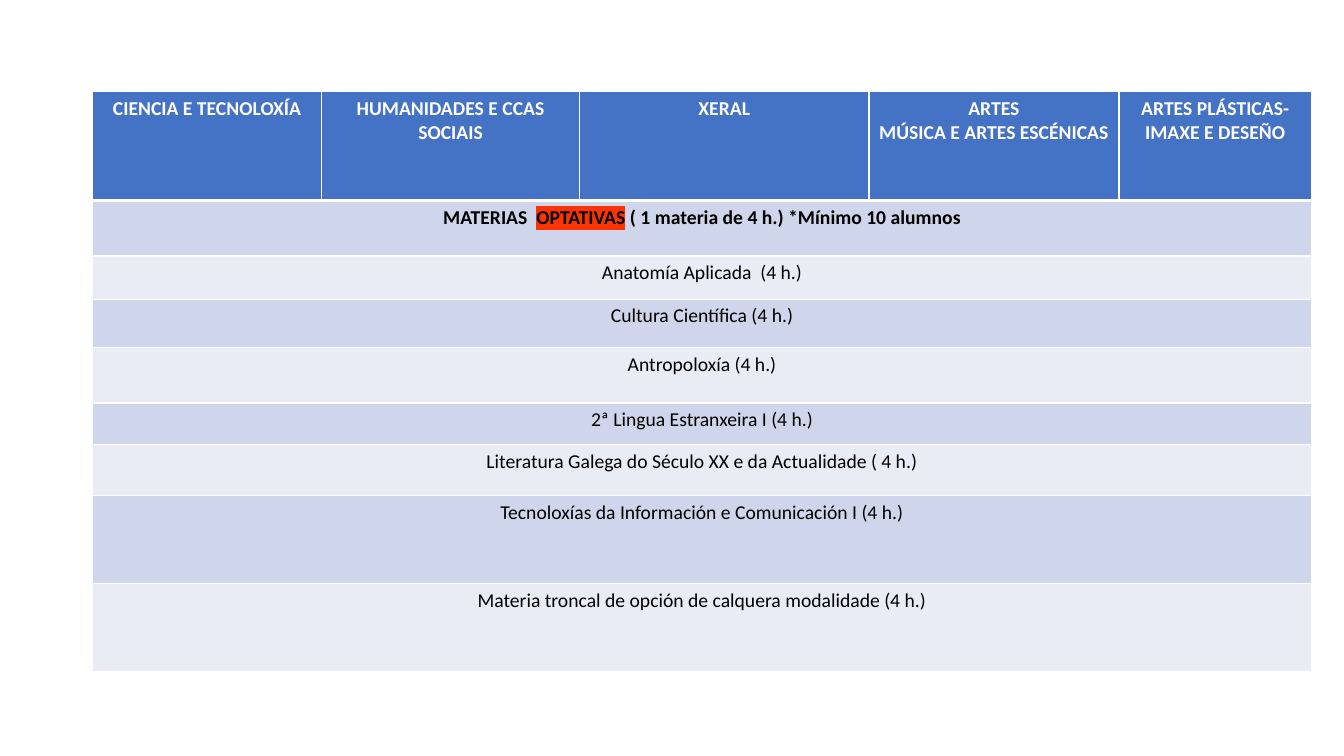
"""Build the slide that lists the optional subjects shared by every study branch."""
from dataclasses import dataclass

from lxml.etree import SubElement
from pptx import Presentation
from pptx.dml.color import RGBColor
from pptx.enum.text import PP_ALIGN as Align
from pptx.oxml import parse_xml
from pptx.oxml.ns import nsdecls, qn
from pptx.table import _Cell as Cell
from pptx.text.text import _Paragraph as Paragraph
from pptx.util import Inches, Pt

WHITE = RGBColor(0xFF, 0xFF, 0xFF)
BLACK = RGBColor(0x00, 0x00, 0x00)
HEADER_BLUE = RGBColor(0x44, 0x72, 0xC4)
BAND_DARK = RGBColor(0xCF, 0xD5, 0xEA)
BAND_LIGHT = RGBColor(0xE9, 0xEB, 0xF5)
MARKER_RED = RGBColor(0xFF, 0x33, 0x00)

SLIDE_WIDTH, SLIDE_HEIGHT = Inches(13.33), Inches(7.5)
LEFT, TOP = 6.9, 12.13
HEADER_HEIGHT = 14.4
TEXT_FORMAT = {"name": "Calibri", "size": Pt(14)}


@dataclass(frozen=True)
class Branch:
    """A header column, its width in percent of the slide."""
    title: str
    width: float


@dataclass(frozen=True)
class Band:
    """A full-width row, its height in percent of the slide."""
    text: str
    height: float
    bold: bool = False
    marked: str = ""


BRANCHES = [
    Branch("CIENCIA E TECNOLOXÍA", 17.03),
    Branch("HUMANIDADES E CCAS SOCIAIS", 19.2),
    Branch("XERAL", 21.53),
    Branch("ARTES\nMÚSICA E ARTES ESCÉNICAS", 18.6),
    Branch("ARTES PLÁSTICAS-IMAXE E DESEÑO", 14.33),
]
BANDS = [
    Band("MATERIAS  OPTATIVAS ( 1 materia de 4 h.) *Mínimo 10 alumnos", 7.33, True, "OPTATIVAS"),
    Band("Anatomía Aplicada  (4 h.)", 5.73),
    Band("Cultura Científica (4 h.)", 6.4),
    Band("Antropoloxía (4 h.)", 7.33),
    Band("2ª Lingua Estranxeira I (4 h.)", 5.47),
    Band("Literatura Galega do Século XX e da Actualidade ( 4 h.)", 6.8),
    Band("Tecnoloxías da Información e Comunicación I (4 h.)", 11.6),
    Band("Materia troncal de opción de calquera modalidade (4 h.)", 11.6),
]


def across(percent: float) -> int:
    """Turn a share of the slide's width into a length."""
    return round(SLIDE_WIDTH * percent / 100)


def down(percent: float) -> int:
    """Turn a share of the slide's height into a length."""
    return round(SLIDE_HEIGHT * percent / 100)


def add_words(paragraph: Paragraph, words: str, color: RGBColor, bold: bool, marked: bool) -> None:
    """Add one run of words, with a marker behind it if asked."""
    run = paragraph.add_run()
    run.text = words
    for key, value in {**TEXT_FORMAT, "bold": bold}.items():
        setattr(run.font, key, value)
    run.font.color.rgb = color
    if marked:
        highlight = parse_xml(f"<a:highlight {nsdecls('a')}/>")
        SubElement(highlight, qn("a:srgbClr"), val=str(MARKER_RED))
        run.font.fill._xPr.find(qn("a:solidFill")).addnext(highlight)


def write_cell(cell: Cell, text: str, color: RGBColor, bold: bool, marked: str = "") -> None:
    """Write centred lines into a cell, marking the given word."""
    frame = cell.text_frame
    for index, line in enumerate(text.split("\n")):
        paragraph = frame.add_paragraph() if index else frame.paragraphs[0]
        paragraph.alignment = Align.CENTER
        before, found, after = line.partition(marked) if marked else (line, "", "")
        for words in filter(None, (before, found, after)):
            add_words(paragraph, words, color, bold, words == marked)


def paint_cell(cell: Cell, fill: RGBColor, top: float, bottom: float) -> None:
    """Give a cell its white rules and its fill."""
    properties = cell._tc.get_or_add_tcPr()
    for side, points in {"L": 1, "R": 1, "T": top, "B": bottom}.items():
        rule = SubElement(properties, qn(f"a:ln{side}"), w=str(Pt(points)))
        SubElement(SubElement(rule, qn("a:solidFill")), qn("a:srgbClr"), val=str(WHITE))
    cell.fill.solid()
    cell.fill.fore_color.rgb = fill


def main() -> None:
    """Create the presentation and save it."""
    deck = Presentation()
    deck.slide_width, deck.slide_height = SLIDE_WIDTH, SLIDE_HEIGHT
    slide = deck.slides.add_slide(deck.slide_layouts[6])

    heights = [HEADER_HEIGHT, *(band.height for band in BANDS)]
    width = sum(branch.width for branch in BRANCHES)
    subjects = slide.shapes.add_table(
        len(heights), len(BRANCHES), across(LEFT), down(TOP), across(width), down(sum(heights))
    ).table
    for row, height in zip(subjects.rows, heights):
        row.height = down(height)

    for index, branch in enumerate(BRANCHES):
        subjects.columns[index].width = across(branch.width)
        header = subjects.cell(0, index)
        write_cell(header, branch.title, WHITE, True)
        paint_cell(header, HEADER_BLUE, top=1, bottom=3)

    for index, band in enumerate(BANDS, start=1):
        subject = subjects.cell(index, 0)
        subject.merge(subjects.cell(index, len(BRANCHES) - 1))
        write_cell(subject, band.text, BLACK, band.bold, band.marked)
        paint_cell(subject, BAND_DARK if index % 2 else BAND_LIGHT, top=3 if index == 1 else 1, bottom=1)

    deck.save("out.pptx")


if __name__ == "__main__":
    main()
